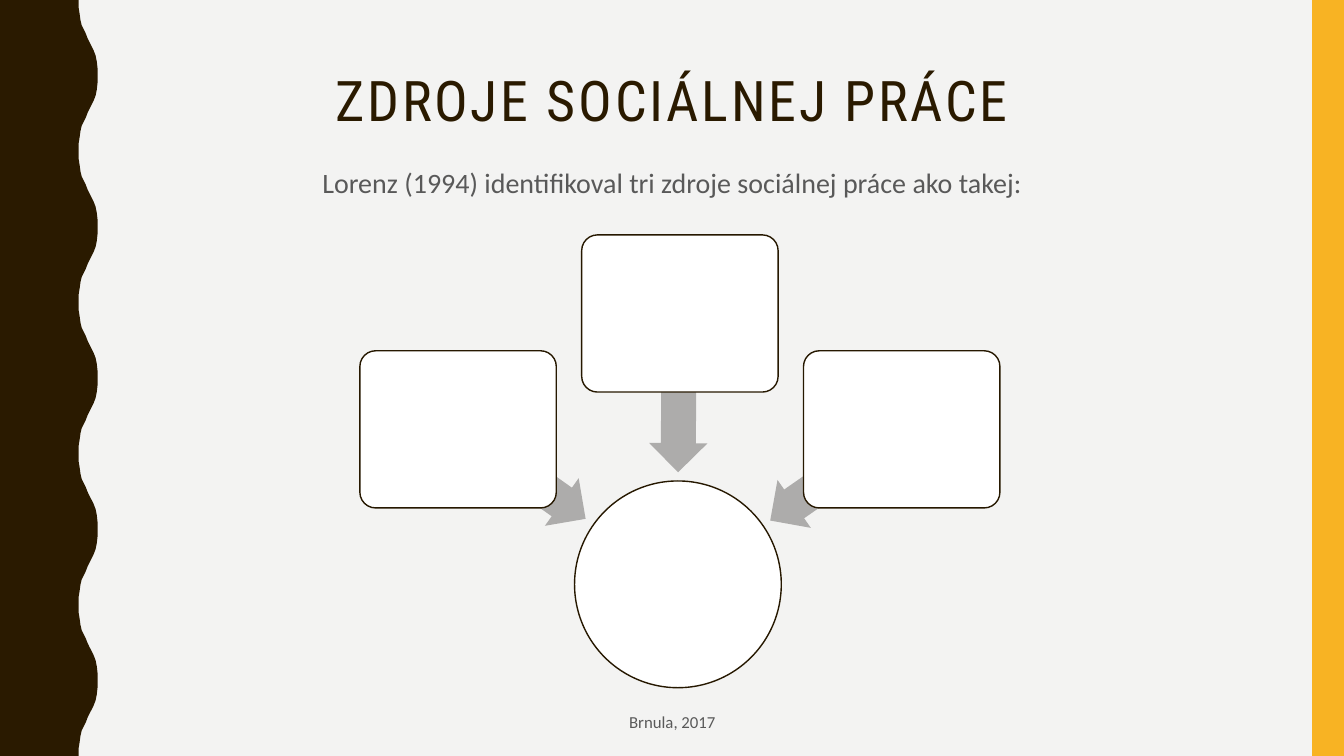
from dataclasses import dataclass

from pptx import Presentation
from pptx.dml.color import RGBColor
from pptx.enum.shapes import MSO_SHAPE
from pptx.enum.text import MSO_ANCHOR, PP_ALIGN
from pptx.shapes.autoshape import Shape
from pptx.slide import Slide
from pptx.util import Cm, Pt

BACKGROUND = RGBColor(0xF3, 0xF3, 0xF2)
BROWN = RGBColor(0x2A, 0x1A, 0x00)
OUTLINE = RGBColor(0x26, 0x18, 0x00)
YELLOW = RGBColor(0xF8, 0xB3, 0x23)
GRAY_TEXT = RGBColor(0x59, 0x59, 0x59)
ARROW_GRAY = RGBColor(0xAD, 0xAC, 0xAB)
WHITE = RGBColor(0xFF, 0xFF, 0xFF)

PAGE_WIDTH, PAGE_HEIGHT = 33.87, 19.05

# Half a wave of the left band, from trough to crest: (x, y) in cm
HALF_WAVE = [
    (1.98, 0), (1.98, 0.18), (2.01, 0.36), (2.03, 0.51), (2.06, 0.64),
    (2.11, 0.74), (2.16, 0.84), (2.21, 0.97), (2.26, 1.07), (2.31, 1.17),
    (2.36, 1.27), (2.41, 1.4), (2.44, 1.55), (2.46, 1.73), (2.46, 1.9),
]
WAVE_COUNT = 5


@dataclass(frozen=True)
class Label:
    text: str
    left: float
    top: float
    width: float
    height: float
    font: str
    size: float
    color: RGBColor
    anchor: MSO_ANCHOR = MSO_ANCHOR.TOP
    line_spacing: float = 1.0
    space_before: float = 0
    letter_spacing: float = 0


@dataclass(frozen=True)
class Source:
    """A source box and the arrow leading from it to the circle."""
    box_top: float
    arrow_left: float
    arrow_top: float
    arrow_length: float
    rotation: float


LABELS = [
    Label("Brnula, 2017", 11.23, 17.7, 11.43, 0.97, "Calibri", 12, GRAY_TEXT,
          anchor=MSO_ANCHOR.MIDDLE),
    Label("ZDROJE SOCIÁLNEJ PRÁCE", 5.51, 1.73, 22.86, 2.79,
          "Roboto Condensed", 40, BROWN, line_spacing=0.9, letter_spacing=2),
    Label("Lorenz (1994) identifikoval tri zdroje sociálnej práce ako takej:",
          5.51, 3.96, 22.86, 13.06, "Calibri", 20, GRAY_TEXT,
          line_spacing=1.1, space_before=7),
]

SOURCES = [
    Source(8.84, 11.18, 11.2, 3.94, 215.3),
    Source(5.92, 15.11, 9.17, 3.99, 270.5),
    Source(8.84, 19.05, 11.23, 4.04, 325.2),
]
BOX_LEFT, BOX_STEP = 9.07, 5.59
BOX_WIDTH, BOX_HEIGHT = 4.95, 3.96
ARROW_THICKNESS = 1.47


def paint(shape: Shape, fill: RGBColor, line: RGBColor | None = None) -> None:
    shape.shadow.inherit = False
    shape.fill.solid()
    shape.fill.fore_color.rgb = fill
    if line is None:
        shape.line.fill.background()
    else:
        shape.line.color.rgb = line
        shape.line.width = Pt(1)


def add_figure(page: Slide, kind: MSO_SHAPE, left: float, top: float,
               width: float, height: float, fill: RGBColor,
               line: RGBColor | None = None) -> Shape:
    shape = page.shapes.add_shape(kind, Cm(left), Cm(top), Cm(width), Cm(height))
    paint(shape, fill, line)
    return shape


def add_label(page: Slide, label: Label) -> None:
    box = page.shapes.add_textbox(Cm(label.left), Cm(label.top),
                                  Cm(label.width), Cm(label.height))
    frame = box.text_frame
    frame.word_wrap = True
    frame.vertical_anchor = label.anchor
    para = frame.paragraphs[0]
    para.alignment = PP_ALIGN.CENTER
    para.line_spacing = label.line_spacing
    para.space_before = Pt(label.space_before)
    span = para.add_run()
    span.text = label.text
    span.font.name = label.font
    span.font.size = Pt(label.size)
    span.font.color.rgb = label.color
    if label.letter_spacing:
        span._r.get_or_add_rPr().set("spc", str(int(label.letter_spacing * 100)))


def add_wavy_band(page: Slide) -> None:
    period = PAGE_HEIGHT / WAVE_COUNT
    falling = [(x, period - y) for x, y in reversed(HALF_WAVE)]
    edge = [(x, y + wave * period)
            for wave in range(WAVE_COUNT) for x, y in HALF_WAVE + falling]
    points = [(Cm(x), Cm(y)) for x, y in edge + [(0, PAGE_HEIGHT)]]
    builder = page.shapes.build_freeform(0, 0)
    builder.add_line_segments(points, close=True)
    paint(builder.convert_to_shape(), BROWN)


def add_source(page: Slide, source: Source, box_left: float) -> None:
    arrow = add_figure(page, MSO_SHAPE.LEFT_ARROW, source.arrow_left,
                       source.arrow_top, source.arrow_length, ARROW_THICKNESS,
                       ARROW_GRAY)
    arrow.adjustments[0] = 0.6
    arrow.adjustments[1] = 0.5
    arrow.rotation = source.rotation
    box = add_figure(page, MSO_SHAPE.ROUNDED_RECTANGLE, box_left,
                     source.box_top, BOX_WIDTH, BOX_HEIGHT, WHITE, OUTLINE)
    box.adjustments[0] = 0.1


def main() -> None:
    deck = Presentation()
    deck.slide_width, deck.slide_height = Cm(PAGE_WIDTH), Cm(PAGE_HEIGHT)
    page = deck.slides.add_slide(deck.slide_layouts[6])
    page.background.fill.solid()
    page.background.fill.fore_color.rgb = BACKGROUND

    # Side decoration
    add_wavy_band(page)
    add_figure(page, MSO_SHAPE.RECTANGLE, 33.07, 0, 0.8, PAGE_HEIGHT, YELLOW)

    # Footer, title and introduction
    for label in LABELS:
        add_label(page, label)

    # Three sources pointing to the circle
    add_figure(page, MSO_SHAPE.OVAL, 14.48, 12.12, 5.21, 5.21, WHITE, OUTLINE)
    for index, source in enumerate(SOURCES):
        add_source(page, source, BOX_LEFT + index * BOX_STEP)

    deck.save("out.pptx")


if __name__ == "__main__":
    main()
